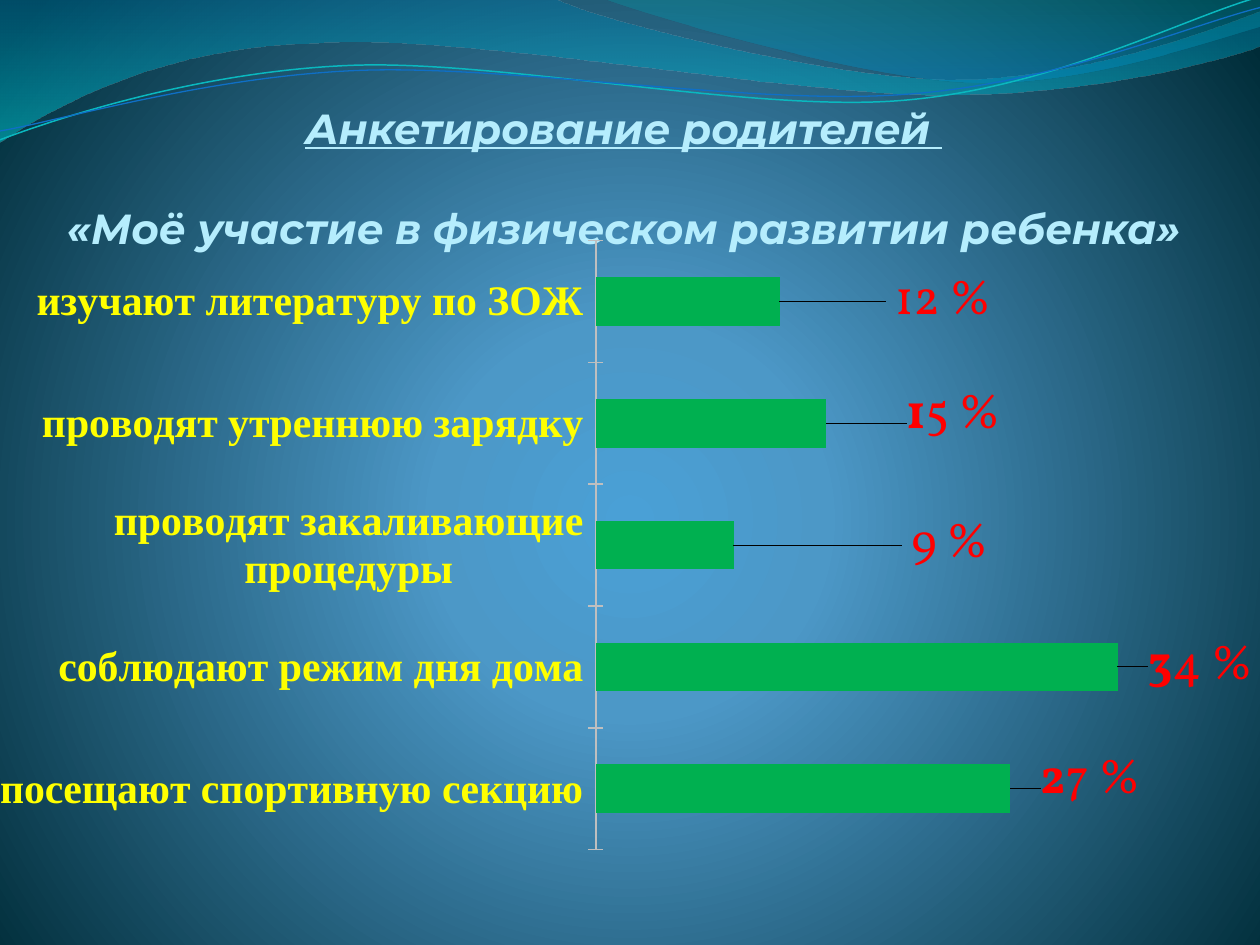
from copy import deepcopy
from dataclasses import dataclass
from typing import Optional

from lxml import etree
from pptx import Presentation
from pptx.chart import data
from pptx.dml.color import RGBColor
from pptx.enum import chart as ch, text
from pptx.oxml import parse_xml
from pptx.oxml.ns import nsdecls, qn
from pptx.util import Inches, Pt

COLORS = {
    "glow": "4AA0D6", "mid": "4C98C7", "edge": "002C38",
    "blue": "0074A1", "cyan": "00C6CF", "teal": "00A1A9", "azure": "008BBF",
    "line_teal": "0AB8BF", "line_blue": "0F6FC6", "title": "B5EDFD",
    "category": "FFFF00", "bar": "00B050", "label": "FF0000",
    "white": "FFFFFF", "axis": "BFBFBF",
}
LINEAR = '<a:lin ang="5400000" scaled="0"/>'
RADIAL = ('<a:path path="circle"><a:fillToRect l="50000" t="55000" '
          'r="50000" b="45000"/></a:path>')
NO_LEADERS = (
    f'<c:extLst {nsdecls("c")}><c:ext uri="{{CE6537A1-D6FC-4f65-9D91-7224C49458BB}}" '
    'xmlns:c15="http://schemas.microsoft.com/office/drawing/2012/chart">'
    '<c15:showLeaderLines val="0"/></c:ext></c:extLst>')

Point = tuple[float, float]
Stop = tuple[int, str, int]


@dataclass
class Wave:
    segments: list[list[Point]]
    stops: Optional[list[Stop]] = None
    line: str = ""
    width: float = 0


@dataclass
class Answer:
    name: str
    value: int
    label: str
    dx: float
    dy: float


WAVES = [
    Wave(
        [[(0, 0)], [(4.4, -0.01)],
         [(4.76, 0.17), (6.64, 0.63), (7.58, 0.63)],
         [(8.53, 0.63), (9.58, 0.26), (10, 0.09)], [(10.01, 0.36)],
         [(9.83, 0.44), (8.7, 0.76), (7.46, 0.75)],
         [(6.22, 0.75), (3.82, 0.28), (2.57, 0.34)],
         [(1.29, 0.36), (0.46, 0.83), (-0.01, 1.13)], [(0, 0)]],
        stops=[(0, "blue", 45), (100, "cyan", 55)]),
    Wave(
        [[(4.79, -0.01)],
         [(5.09, 0.11), (6.82, 0.62), (7.69, 0.65)],
         [(8.56, 0.69), (9.61, 0.32), (10, 0.21)], [(10, 0)], [(4.79, -0.01)]],
        stops=[(0, "teal", 30), (80, "azure", 45)]),
    Wave(
        [[(0, 1.11)],
         [(0.48, 0.93), (1.58, 0.57), (2.77, 0.52)],
         [(3.95, 0.47), (5.93, 0.89), (7.13, 0.8)],
         [(8.33, 0.71), (9.38, 0.15), (9.98, -0.02)]],
        line="line_teal", width=0.85),
    Wave(
        [[(0, 1.04)],
         [(0.47, 0.96), (1.64, 0.61), (2.83, 0.56)],
         [(4.03, 0.51), (5.97, 0.84), (7.17, 0.75)],
         [(8.36, 0.67), (9.41, 0.21), (10, 0.06)]],
        line="line_blue", width=0.75),
]

ANSWERS = [
    Answer("посещают спортивную секцию", 27, "27 %", 0.02, -0.01),
    Answer("соблюдают режим дня дома", 34, "34 %", 0.02, 0),
    Answer("проводят закаливающие процедуры", 9, " 9 %", 0.13, 0),
    Answer("проводят утреннюю зарядку", 15, "15 %", 0.06, -0.01),
    Answer("изучают литературу по ЗОЖ", 12, " 12 %", 0.08, 0),
]


def rgb(name: str) -> RGBColor:
    return RGBColor.from_string(COLORS[name])


def set_gradient(fill, owner, stops: list[Stop], direction: str) -> None:
    fill.gradient()
    old = next(owner.iter(qn("a:gradFill")))
    marks = "".join(
        f'<a:gs pos="{pos * 1000}"><a:srgbClr val="{COLORS[name]}">'
        f'<a:alpha val="{alpha * 1000}"/></a:srgbClr></a:gs>'
        for pos, name, alpha in stops)
    new = parse_xml(f'<a:gradFill {nsdecls("a")} rotWithShape="1">'
                    f'<a:gsLst>{marks}</a:gsLst>{direction}</a:gradFill>')
    old.getparent().replace(old, new)


def bend(sp, segments: list[list[Point]]) -> None:
    lines = list(sp._element.iter(qn("a:lnTo")))
    for segment in segments[1:]:
        group, lines = lines[:len(segment)], lines[len(segment):]
        if len(group) == 3:
            cubic = etree.Element(qn("a:cubicBezTo"))
            group[0].addprevious(cubic)
            for line in group:
                cubic.append(line[0])
                line.getparent().remove(line)


def draw_wave(slide, wave: Wave) -> None:
    points = [(Inches(x), Inches(y)) for segment in wave.segments for x, y in segment]
    builder = slide.shapes.build_freeform(*points[0], scale=1.0)
    builder.add_line_segments(points[1:], close=bool(wave.stops))
    sp = builder.convert_to_shape()
    bend(sp, wave.segments)
    sp.shadow.inherit = False
    if wave.stops:
        set_gradient(sp.fill, sp._element, wave.stops, LINEAR)
        sp.line.fill.background()
    else:
        sp.fill.background()
        sp.line.color.rgb = rgb(wave.line)
        sp.line.width = Pt(wave.width)


def style_font(font, name: str, size: float, color: str, bold: bool) -> None:
    font.name = name
    font.size = Pt(size)
    font.bold = bold
    font.color.rgb = rgb(color)


def draw_title(slide) -> None:
    sp = slide.shapes.add_textbox(Inches(0.46), Inches(0.44), Inches(9), Inches(1.57))
    tf = sp.text_frame
    tf.word_wrap = True
    tf.vertical_anchor = text.MSO_ANCHOR.BOTTOM
    tf.margin_left = tf.margin_top = tf.margin_bottom = 0
    tf.margin_right = Inches(0.02)
    p = tf.paragraphs[0]
    p.text = "Анкетирование родителей \v\v«Моё участие в физическом развитии ребенка»"
    p.alignment = text.PP_ALIGN.CENTER
    for r in p.runs:
        style_font(r.font, "Montserrat", 24, "title", True)
        r.font.italic = True
    p.runs[0].font.underline = True
    for line_break in p._p.findall(qn("a:br")):
        line_break.append(deepcopy(p.runs[0]._r.rPr))


def manual_layout(modes: str, **values: float):
    items = "".join(f'<c:{key} val="{value}"/>' for key, value in values.items())
    return parse_xml(f'<c:layout {nsdecls("c")}><c:manualLayout>{modes}{items}'
                     '</c:manualLayout></c:layout>')


def draw_label(series, index: int, answer: Answer) -> None:
    label = series.points[index].data_label
    p = label.text_frame.paragraphs[0]
    for part, bold in ((answer.label[0], True), (answer.label[1:], False)):
        r = p.add_run()
        r.text = part
        style_font(r.font, "Vollkorn", 28, "label", bold)
    label.position = ch.XL_LABEL_POSITION.OUTSIDE_END
    idx = series._element.xpath(f'.//c:dLbl/c:idx[@val="{index}"]')[0]
    idx.addnext(manual_layout("", x=answer.dx, y=answer.dy))


def draw_labels(series) -> None:
    labels = series.data_labels
    labels.show_value = True
    style_font(labels.font, "Vollkorn", 28, "label", True)
    for index, answer in enumerate(ANSWERS):
        draw_label(series, index, answer)
    element = labels._element
    for leader in element.findall(qn("c:showLeaderLines")):
        element.remove(leader)
    element.append(parse_xml(NO_LEADERS))


def draw_chart(slide) -> None:
    chart_data = data.CategoryChartData()
    chart_data.categories = [answer.name for answer in ANSWERS]
    chart_data.add_series("Series 1", [answer.value for answer in ANSWERS])
    chart = slide.shapes.add_chart(
        ch.XL_CHART_TYPE.BAR_CLUSTERED, 0, Inches(0.92), Inches(10), Inches(5.83),
        chart_data).chart
    chart.has_legend = chart.has_title = False
    style_font(chart.font, "Vollkorn", 18, "white", False)

    axis = chart.category_axis
    style_font(axis.tick_labels.font, "Times New Roman", 24, "category", True)
    axis.major_tick_mark = ch.XL_TICK_MARK.CROSS
    axis.format.line.color.rgb = rgb("axis")
    axis.format.line.width = Pt(1)
    chart.value_axis.visible = False
    chart.value_axis.has_major_gridlines = False

    plot = chart.plots[0]
    plot.gap_width = 150
    plot.vary_by_categories = False
    series = plot.series[0]
    series.format.fill.solid()
    series.format.fill.fore_color.rgb = rgb("bar")
    draw_labels(series)

    area = chart._chartSpace.xpath("c:chart/c:plotArea")[0]
    for old in area.findall(qn("c:layout")):
        area.remove(old)
    modes = '<c:layoutTarget val="inner"/><c:xMode val="edge"/><c:yMode val="edge"/>'
    area.insert(0, manual_layout(modes, x=0.47, y=0.17, w=0.49, h=0.83))


def main() -> None:
    prs = Presentation()
    prs.slide_width, prs.slide_height = Inches(10), Inches(7.5)
    slide = prs.slides.add_slide(prs.slide_layouts[6])
    set_gradient(slide.background.fill, slide._element,
                 [(0, "glow", 100), (25, "mid", 100), (100, "edge", 100)], RADIAL)
    for wave in WAVES:
        draw_wave(slide, wave)
    draw_title(slide)
    draw_chart(slide)
    prs.save("out.pptx")


if __name__ == "__main__":
    main()
